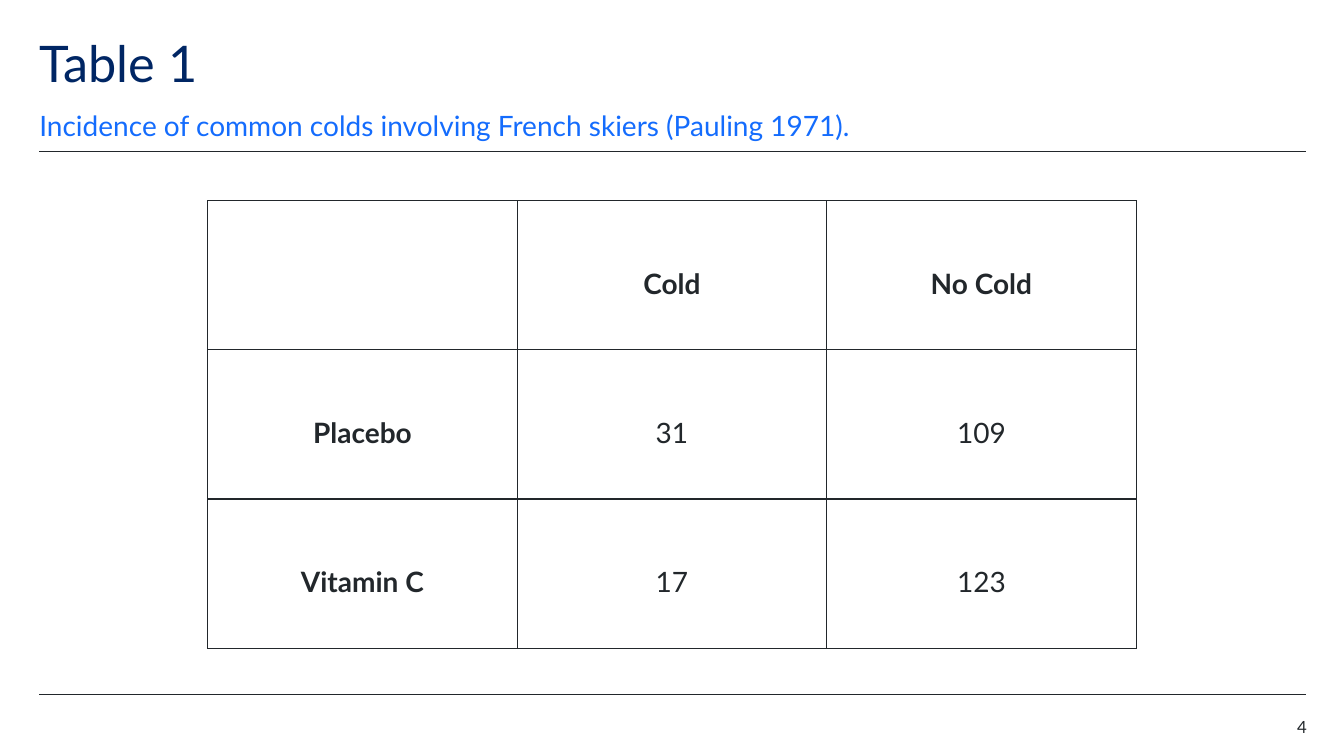
"""Build the slide with the table of colds among skiers."""
from dataclasses import dataclass

from lxml.etree import SubElement
from pptx import Presentation
from pptx.dml.color import RGBColor
from pptx.enum.shapes import MSO_CONNECTOR
from pptx.enum.text import MSO_ANCHOR, PP_ALIGN
from pptx.oxml import parse_xml
from pptx.oxml.ns import nsdecls, qn
from pptx.slide import Slide
from pptx.table import _Cell
from pptx.text.text import TextFrame
from pptx.util import Inches, Pt

FONT = "Lato"
NAVY = RGBColor(0x00, 0x26, 0x64)
BLUE = RGBColor(0x14, 0x6C, 0xFD)
INK = RGBColor(0x22, 0x27, 0x2B)

LEFT, RIGHT = 0.39, 12.95
RULE_TOPS = (1.5, 6.89)
COLUMN_WIDTH, ROW_HEIGHT = 3.07, 1.48
ROWS = (
    ("", "Cold", "No Cold"),
    ("Placebo", "31", "109"),
    ("Vitamin C", "17", "123"),
)


@dataclass(frozen=True)
class Label:
    text: str
    left: float
    top: float
    width: float
    height: float
    size: float
    color: RGBColor
    spacing: float = 0.9
    align: PP_ALIGN = PP_ALIGN.LEFT
    anchor: MSO_ANCHOR = MSO_ANCHOR.TOP


LABELS = (
    Label("Table 1", LEFT, 0.39, 11.02, 0.6, 36, NAVY),
    Label("Incidence of common colds involving French skiers (Pauling 1971).",
          LEFT, 1.07, 11.02, 0.34, 20, BLUE, spacing=1.4, anchor=MSO_ANCHOR.BOTTOM),
    Label("4", 12.17, 7.13, 0.79, 0.2, 12, INK, align=PP_ALIGN.RIGHT),
)


def write_text(frame: TextFrame, text: str, *, size: float, color: RGBColor,
               spacing: float, align: PP_ALIGN, bold: bool = False) -> None:
    para = frame.paragraphs[0]
    para.alignment = align
    para.line_spacing = spacing
    span = para.add_run()
    span.text = text
    span.font.name = FONT
    span.font.size = Pt(size)
    span.font.bold = bold
    span.font.color.rgb = color


def add_label(slide: Slide, label: Label) -> None:
    box = slide.shapes.add_textbox(Inches(label.left), Inches(label.top),
                                   Inches(label.width), Inches(label.height))
    frame = box.text_frame
    frame.word_wrap = True
    frame.vertical_anchor = label.anchor
    frame.margin_left = frame.margin_right = Inches(0)
    frame.margin_top = frame.margin_bottom = Inches(0)
    write_text(frame, label.text, size=label.size, color=label.color,
               spacing=label.spacing, align=label.align)


def add_rule(slide: Slide, top: float) -> None:
    rule = slide.shapes.add_connector(MSO_CONNECTOR.STRAIGHT, Inches(LEFT), Inches(top),
                                      Inches(RIGHT), Inches(top))
    rule.line.color.rgb = INK
    rule.line.width = Pt(0.5)
    SubElement(rule._element.spPr, qn("a:effectLst"))


def add_borders(cell: _Cell) -> None:
    properties = cell._tc.get_or_add_tcPr()
    for position, side in enumerate(("lnL", "lnR", "lnT", "lnB")):
        border = parse_xml(
            f'<a:{side} {nsdecls("a")} w="{Pt(1)}"><a:solidFill>'
            f'<a:srgbClr val="{INK}"/></a:solidFill></a:{side}>')
        properties.insert(position, border)


def add_colds_table(slide: Slide) -> None:
    row_count, column_count = len(ROWS), len(ROWS[0])
    table = slide.shapes.add_table(
        row_count, column_count, Inches(2.06), Inches(1.99),
        Inches(COLUMN_WIDTH * column_count), Inches(ROW_HEIGHT * row_count)).table
    table.first_row = table.horz_banding = False
    for column in table.columns:
        column.width = Inches(COLUMN_WIDTH)
    for row_index, texts in enumerate(ROWS):
        table.rows[row_index].height = Inches(ROW_HEIGHT)
        for column_index, text in enumerate(texts):
            cell = table.cell(row_index, column_index)
            cell.fill.background()
            cell.vertical_anchor = MSO_ANCHOR.MIDDLE
            cell.margin_left = cell.margin_right = Inches(0.12)
            cell.margin_top = cell.margin_bottom = Inches(0)
            add_borders(cell)
            if text:
                write_text(cell.text_frame, text, size=20, color=INK, spacing=1.5,
                           align=PP_ALIGN.CENTER,
                           bold=row_index == 0 or column_index == 0)


def main() -> None:
    deck = Presentation()
    deck.slide_width, deck.slide_height = Inches(13.33), Inches(7.5)
    page = deck.slides.add_slide(deck.slide_layouts[6])
    for top in RULE_TOPS:
        add_rule(page, top)
    for label in LABELS:
        add_label(page, label)
    add_colds_table(page)
    deck.save("out.pptx")


if __name__ == "__main__":
    main()
